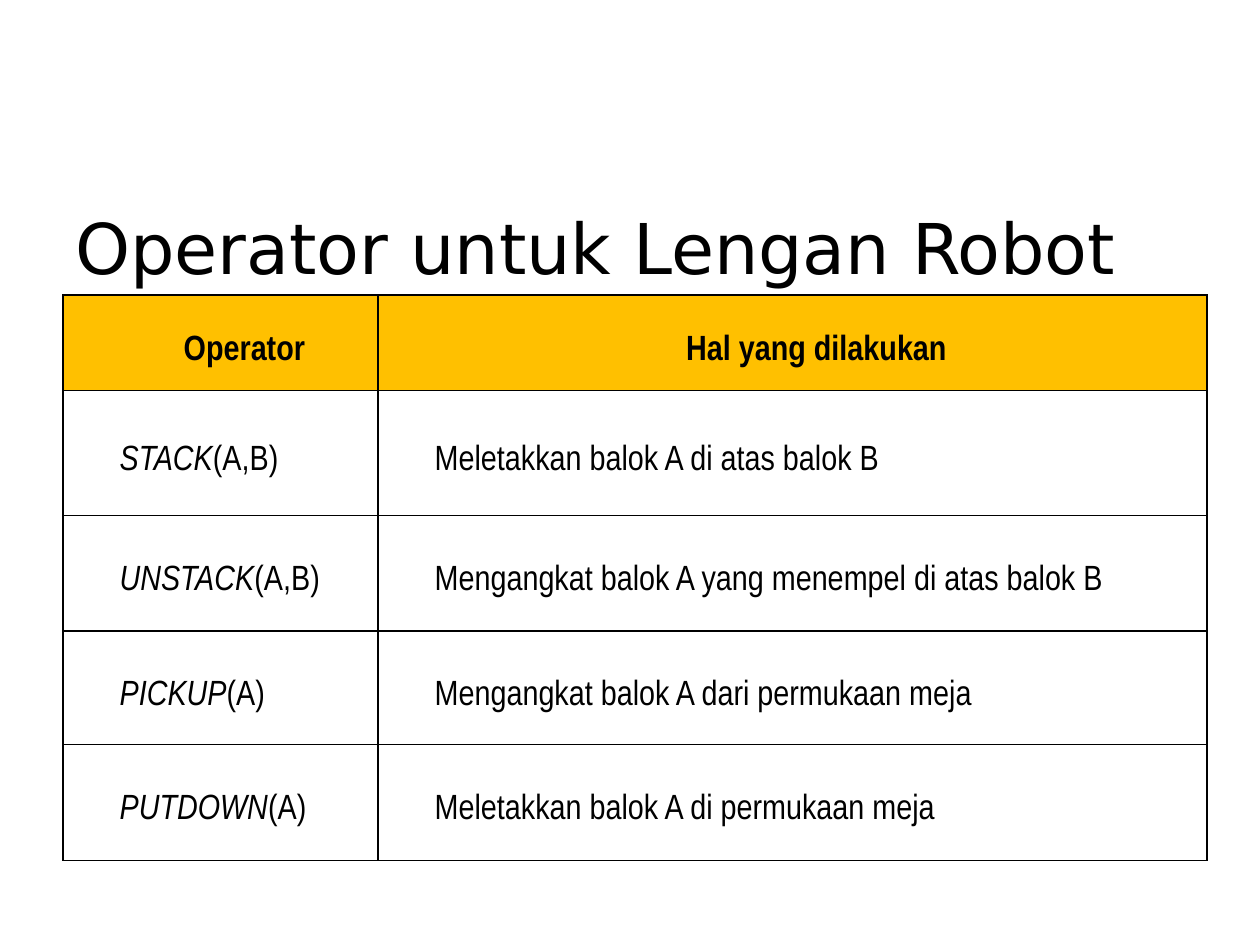
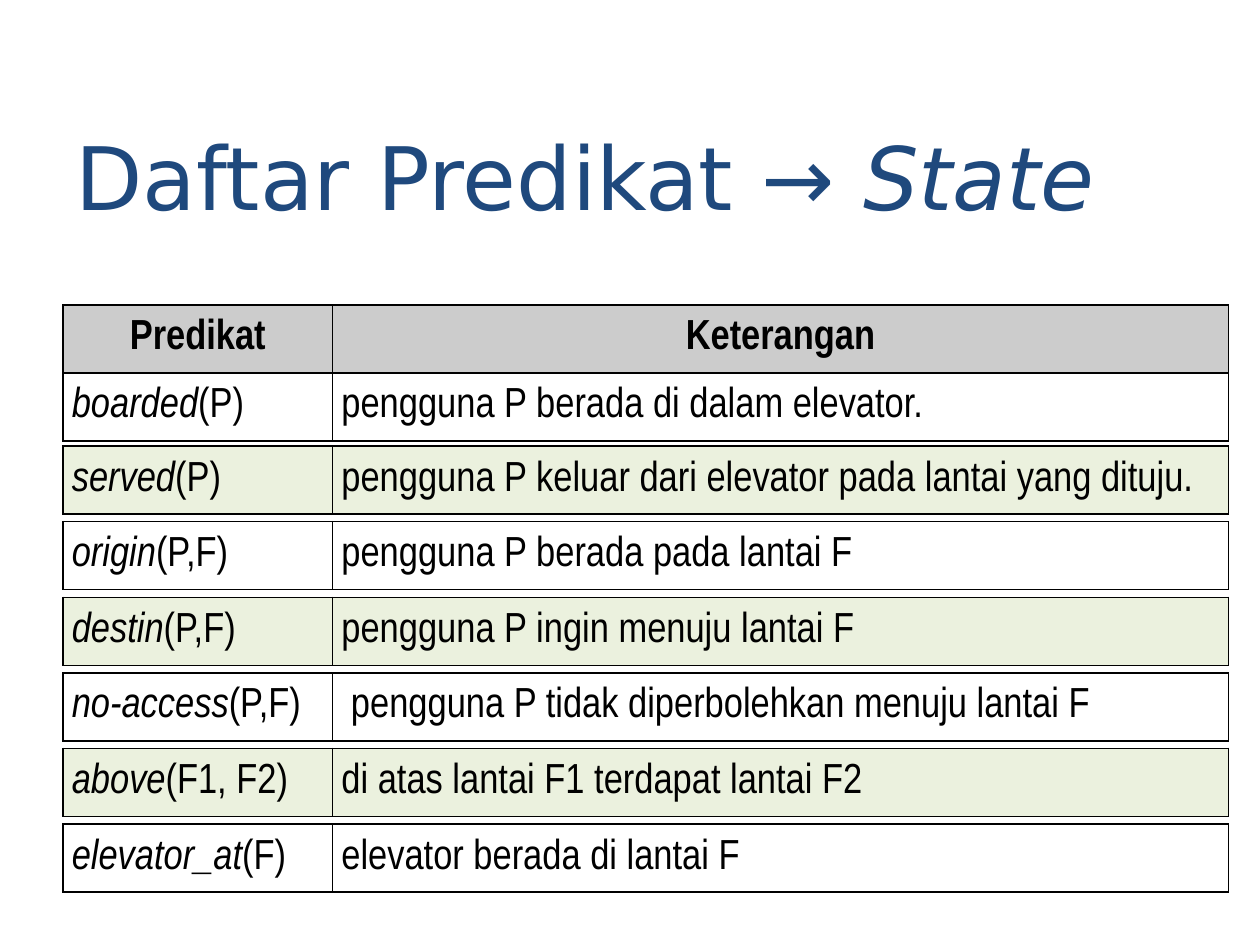
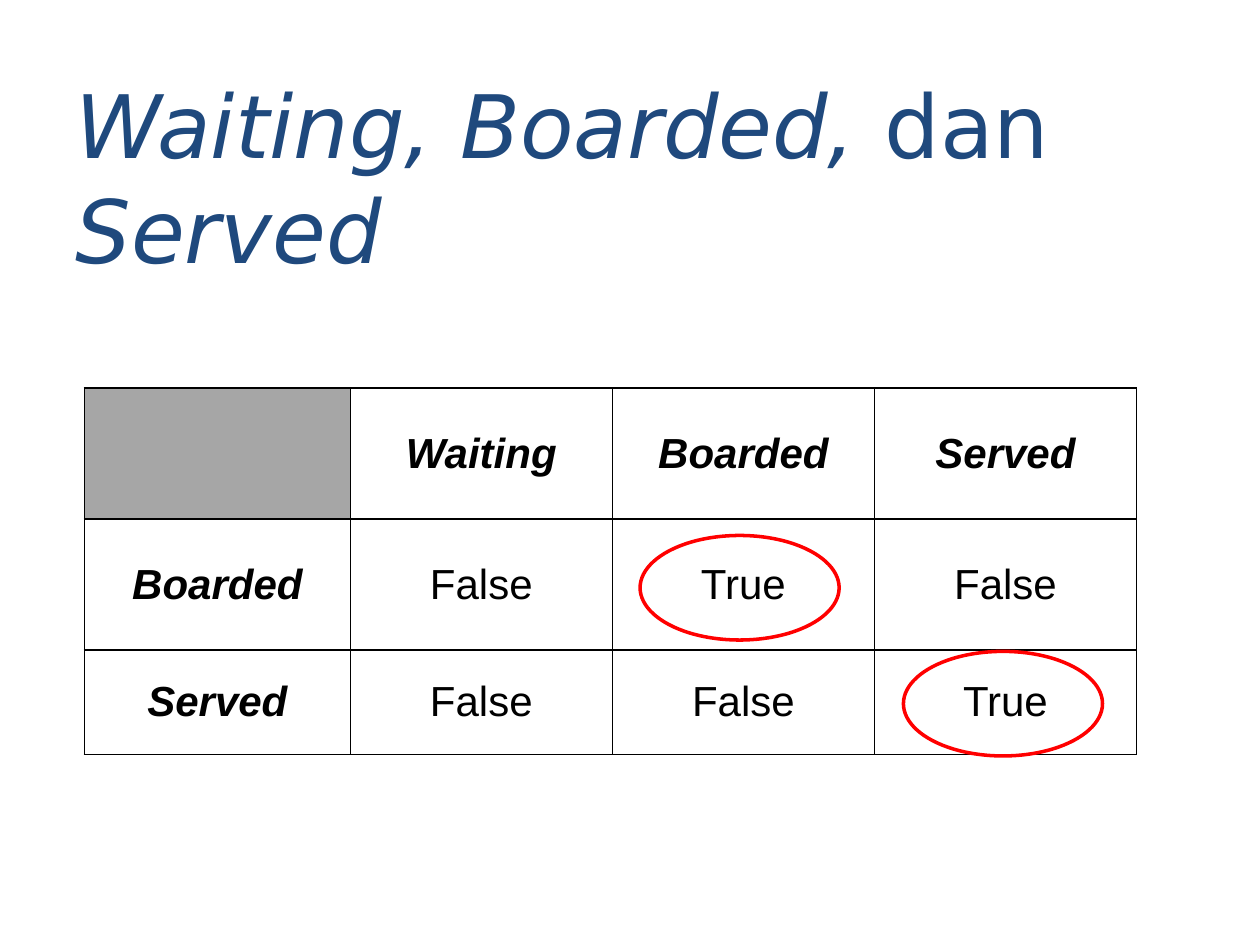
from lxml import etree
from pptx import Presentation
from pptx.dml.color import RGBColor
from pptx.enum.shapes import MSO_SHAPE
from pptx.enum.text import MSO_ANCHOR, MSO_AUTO_SIZE, PP_ALIGN
from pptx.oxml.ns import qn
from pptx.util import Inches, Pt

LEFT, CENTER, JUSTIFY = PP_ALIGN.LEFT, PP_ALIGN.CENTER, PP_ALIGN.JUSTIFY
MIDDLE = MSO_ANCHOR.MIDDLE
NO_AUTOFIT = MSO_AUTO_SIZE.NONE
OVAL = MSO_SHAPE.OVAL
TITLE_ONLY = 5

BLACK = "000000"
NAVY = "1F497D"
RED = "FF0000"
AMBER = "FFC000"
SILVER = "CCCCCC"
GRAY = "A6A6A6"
PALE_GREEN = "EBF1DE"
TITLE_FONT = "DejaVu Sans"
NARROW_FONT = "Arial Narrow"
GRID_FONT = "Arial"

ROBOT_OPERATORS = [
    ["Operator", "Hal yang dilakukan"],
    ["*STACK*(A,B)", "Meletakkan balok A di atas balok B"],
    ["*UNSTACK*(A,B)", "Mengangkat balok A yang menempel di atas balok B"],
    ["*PICKUP*(A)", "Mengangkat balok A dari permukaan meja"],
    ["*PUTDOWN*(A)", "Meletakkan balok A di permukaan meja"],
]
PREDICATE_HEAD = [
    ["Predikat", "Keterangan"],
    ["*boarded*(P)", "pengguna P berada di dalam elevator."],
]
PREDICATES = [
    ["*served*(P)", "pengguna P keluar dari elevator pada lantai yang dituju."],
    ["*origin*(P,F)", "pengguna P berada pada lantai F"],
    ["*destin*(P,F)", "pengguna P ingin menuju lantai F"],
    ["*no-access*(P,F)", " pengguna P tidak diperbolehkan menuju lantai F"],
    ["*above*(F1, F2)", "di atas lantai F1 terdapat lantai F2"],
    ["*elevator_at*(F)", "elevator berada di lantai F"],
]
PASSENGER_STATES = [
    ["", "*Waiting*", "*Boarded*", "*Served*"],
    ["*Boarded*", "False", "True", "False"],
    ["*Served*", "False", "False", "True"],
]


def color(value):
    return RGBColor.from_string(value)


class Deck:
    def __init__(self):
        self.presentation = Presentation()
        self.presentation.slide_width = Inches(10)
        self.presentation.slide_height = Inches(7.5)
        self.slide = None

    def fill_paragraph(self, paragraph, markup, font, size, text_color, align, bold=False):
        paragraph.alignment = align
        paragraph.font.name = font
        paragraph.font.size = Pt(size)
        paragraph.font.bold = bold
        paragraph.font.color.rgb = color(text_color)
        for position, text in enumerate(markup.split("*")):
            if text:
                run = paragraph.add_run()
                run.text = text
                run.font.italic = position % 2 == 1

    def start_slide(self, markup, top=0.77, size=50, text_color=NAVY):
        layout = self.presentation.slide_layouts[TITLE_ONLY]
        self.slide = self.presentation.slides.add_slide(layout)
        title = self.slide.shapes.title
        title.left, title.top = Inches(0.5), Inches(top)
        title.width, title.height = Inches(9.08), Inches(1.25)
        frame = title.text_frame
        frame.auto_size = NO_AUTOFIT
        frame.word_wrap = True
        frame.vertical_anchor = MIDDLE
        self.fill_paragraph(frame.paragraphs[0], markup, TITLE_FONT, size, text_color, LEFT)

    def border(self, cell):
        properties = cell._tc.get_or_add_tcPr()
        for position, side in enumerate(("a:lnL", "a:lnR", "a:lnT", "a:lnB")):
            line = etree.Element(qn(side), w=str(Pt(1)))
            fill = etree.SubElement(line, qn("a:solidFill"))
            etree.SubElement(fill, qn("a:srgbClr"), val=BLACK)
            properties.insert(position, line)

    def table(self, left, top, columns, rows, texts, font, size, fill_of,
              body_align=JUSTIFY, header_rows=1, header_columns=0,
              indent=0, line_spacing=1):
        frame = self.slide.shapes.add_table(
            len(rows), len(columns), Inches(left), Inches(top),
            Inches(sum(columns)), Inches(sum(rows)))
        table = frame.table
        table.first_row = table.horz_banding = False
        for column, width in zip(table.columns, columns):
            column.width = Inches(width)
        for row, height in zip(table.rows, rows):
            row.height = Inches(height)
        for i, row_texts in enumerate(texts):
            for j, markup in enumerate(row_texts):
                cell = table.cell(i, j)
                cell.vertical_anchor = MIDDLE
                cell.margin_left = cell.margin_right = Inches(0.07)
                cell.margin_top = cell.margin_bottom = 0
                fill = fill_of(i, j)
                if fill:
                    cell.fill.solid()
                    cell.fill.fore_color.rgb = color(fill)
                else:
                    cell.fill.background()
                self.border(cell)
                paragraph = cell.text_frame.paragraphs[0]
                paragraph.line_spacing = line_spacing
                paragraph._p.get_or_add_pPr().set("indent", str(Inches(indent)))
                is_header = i < header_rows or j < header_columns
                self.fill_paragraph(paragraph, markup, font, size, BLACK,
                                    CENTER if is_header else body_align, is_header)

    def ring(self, left, top):
        shape = self.slide.shapes.add_shape(
            OVAL, Inches(left), Inches(top), Inches(1.58), Inches(0.83))
        shape.shadow.inherit = False
        shape.fill.background()
        shape.line.color.rgb = color(RED)
        shape.line.width = Pt(2)


def add_operators(deck):
    deck.start_slide("Operator untuk Lengan Robot", top=1.33, size=40, text_color=BLACK)
    deck.table(0.5, 2.34, [2.5, 6.58], [0.76, 0.99, 0.92, 0.9, 0.92],
               ROBOT_OPERATORS, NARROW_FONT, 20,
               lambda i, j: AMBER if i == 0 else None,
               indent=0.38, line_spacing=1.5)


def add_predicates(deck):
    columns, row_height = [2.14, 7.11], 0.54
    deck.start_slide("Daftar Predikat → *State*")
    deck.table(0.5, 2.42, columns, [row_height] * 2, PREDICATE_HEAD, NARROW_FONT, 24,
               lambda i, j: SILVER if i == 0 else None)
    for index, predicate in enumerate(PREDICATES):
        fill = PALE_GREEN if index % 2 == 0 else None
        deck.table(0.5, 3.54 + 0.6 * index, columns, [row_height], [predicate],
                   NARROW_FONT, 24, lambda i, j: fill, header_rows=0)


def add_passenger_states(deck):
    deck.start_slide("*Waiting, Boarded, *dan *Served*")
    deck.table(0.67, 3.08, [2.11] + [2.08] * 3, [1.04, 1.04, 0.83],
               PASSENGER_STATES, GRID_FONT, 24,
               lambda i, j: GRAY if i == j == 0 else None,
               body_align=CENTER, header_columns=1)
    deck.ring(5.08, 4.25)
    deck.ring(7.17, 5.17)


def main():
    deck = Deck()
    add_operators(deck)
    add_predicates(deck)
    add_passenger_states(deck)
    deck.presentation.save("out.pptx")


if __name__ == "__main__":
    main()
